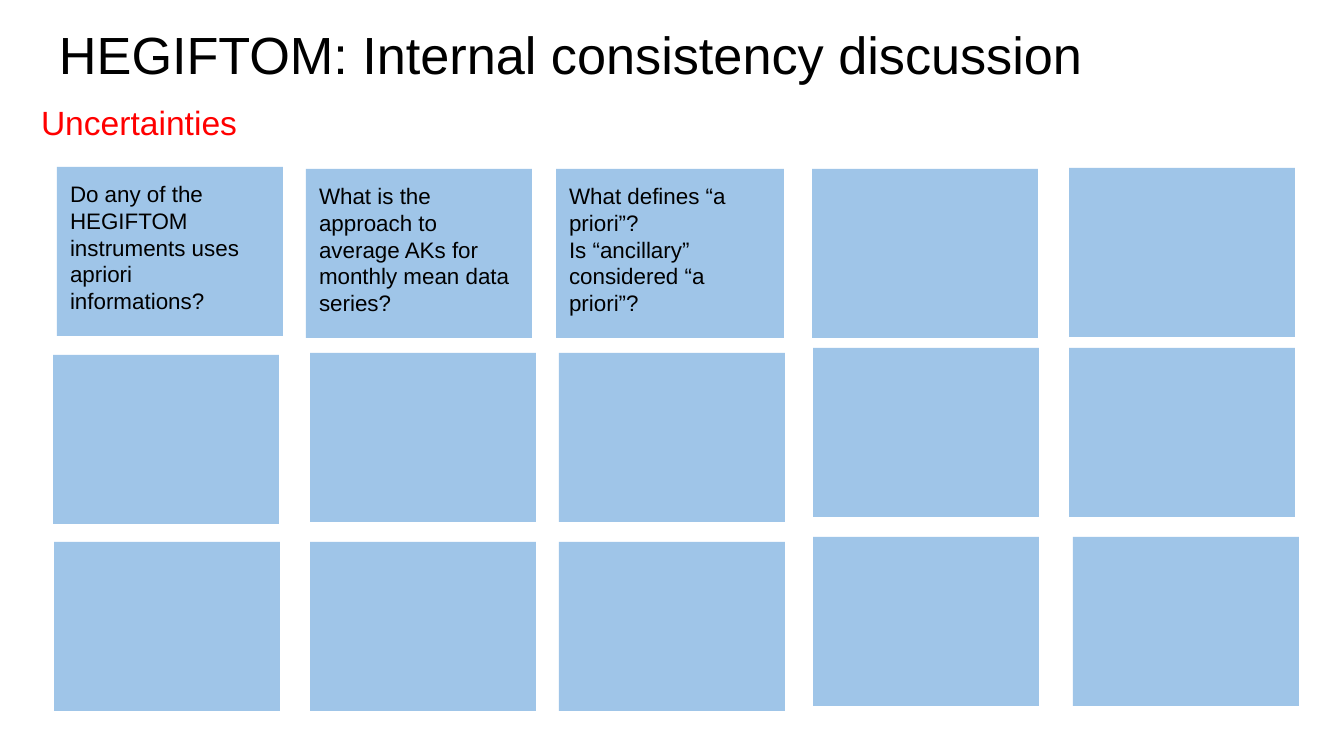
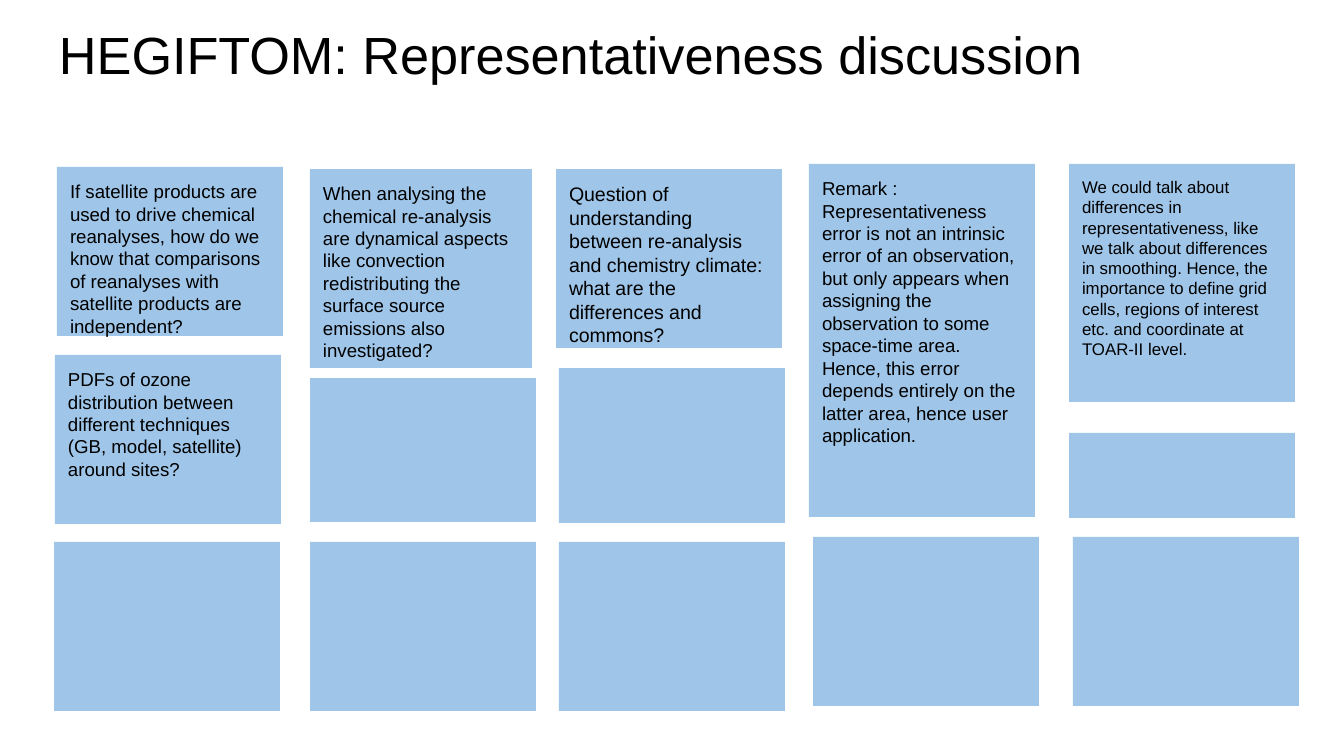
import dataclasses

import pptx
import pptx.dml.color
import pptx.enum.shapes
import pptx.enum.text
import pptx.util

EMU_PER_PX = 914400 / 134.4
COLORS = {"note": "9FC5E8", "text": "000000", "accent": "FF0000", "background": "FFFFFF"}
FONT = "Arial"
INSET = 13

# Boxes are left, top, width, height in px
SLIDE_SIZE = (1344, 756)
TITLE_BOX = (46, 9, 1253, 85)
SUBTITLE_BOX = (28, 89, 546, 63)
BOARD_BOX = (54, 164, 1245, 547)
COLUMN_LEFTS = (0, 256, 505, 759, 1015)


@dataclasses.dataclass
class Note:
    column: int
    top: int
    text: str = ""
    size: float = 12
    nudge: int = 0
    width: int = 226
    height: int = 169


# Blank notes along the bottom of every board
BOTTOM_ROW = [
    Note(0, 378), Note(1, 378), Note(2, 378), Note(3, 373), Note(4, 373, nudge=4),
]

CONSISTENCY_NOTES = [
    Note(0, 3, "Do any of the HEGIFTOM instruments uses apriori informations?", nudge=3),
    Note(1, 5, "What is the approach to average AKs for monthly mean data series?", nudge=-4),
    Note(2, 5, "What defines “a priori”?\nIs “ancillary” considered “a priori”?",
         nudge=-3, width=228),
    Note(3, 5, nudge=-1),
    Note(4, 4),
    Note(0, 191, nudge=-1),
    Note(1, 189),
    Note(2, 189),
    Note(3, 184),
    Note(4, 184),
]

REPRESENTATIVENESS_NOTES = [
    Note(0, 3, "If satellite products are used to drive chemical reanalyses, how do we know "
         "that comparisons of reanalyses with satellite products are independent?",
         size=10, nudge=3),
    Note(1, 5, "When analysing the chemical re-analysis are dynamical aspects like "
         "convection redistributing the surface source emissions also investigated?",
         size=10, width=222, height=199),
    Note(2, 5, "Question of understanding between re-analysis and chemistry climate: "
         "what are the differences and commons?", size=10.5, nudge=-3, height=179),
    Note(3, 0, "Remark : Representativeness error is not an intrinsic error of an "
         "observation, but only appears when assigning the observation to some "
         "space-time area. Hence, this error depends entirely on the latter area, "
         "hence user application.", size=10, nudge=-4, height=353),
    Note(4, 0, "We could talk about differences in representativeness, like we talk about "
         "differences in smoothing. Hence, the importance to define grid cells, regions "
         "of interest etc. and coordinate at TOAR-II level.", size=9, height=238),
    Note(0, 191, "PDFs of ozone distribution between different techniques "
         "(GB, model, satellite) around sites?", size=10, nudge=1),
    Note(1, 214, height=144),
    Note(2, 204, height=155),
    Note(4, 269, height=85),
]


def px(length):
    return pptx.util.Emu(round(length * EMU_PER_PX))


def rgb(name):
    return pptx.dml.color.RGBColor.from_string(COLORS[name])


def write_text(shape, text, size=12, color="text"):
    frame = shape.text_frame
    frame.word_wrap = True
    frame.auto_size = pptx.enum.text.MSO_AUTO_SIZE.NONE
    frame.vertical_anchor = pptx.enum.text.MSO_ANCHOR.TOP
    frame.margin_left = frame.margin_right = px(INSET)
    frame.margin_top = frame.margin_bottom = px(INSET)
    frame.text = text
    for para in frame.paragraphs:
        para.alignment = pptx.enum.text.PP_ALIGN.LEFT
        para.line_spacing = 1.0
        para.space_before = para.space_after = pptx.util.Pt(0)
        for span in para.runs:
            span.font.name = FONT
            span.font.size = pptx.util.Pt(size)
            span.font.color.rgb = rgb(color)


def place_title(page, box, text):
    title = page.shapes.title
    title.left, title.top, title.width, title.height = map(px, box)
    write_text(title, text, size=28)


def add_subtitle(page, box, text):
    subtitle = page.shapes.add_textbox(*map(px, box))
    write_text(subtitle, text, size=18, color="accent")


def add_board(page, box, notes):
    left, top = box[:2]
    for note in notes:
        card = page.shapes.add_shape(
            pptx.enum.shapes.MSO_SHAPE.RECTANGLE,
            px(left + COLUMN_LEFTS[note.column] + note.nudge), px(top + note.top),
            px(note.width), px(note.height))
        card.shadow.inherit = False
        card.fill.solid()
        card.fill.fore_color.rgb = rgb("note")
        card.line.fill.background()
        if note.text:
            write_text(card, note.text, size=note.size)


def add_discussion(deck, title, notes, subtitle=None):
    page = deck.slides.add_slide(deck.slide_layouts.get_by_name("Title Only"))
    page.background.fill.solid()
    page.background.fill.fore_color.rgb = rgb("background")
    place_title(page, TITLE_BOX, title)
    if subtitle:
        add_subtitle(page, SUBTITLE_BOX, subtitle)
    add_board(page, BOARD_BOX, notes + BOTTOM_ROW)


def main():
    deck = pptx.Presentation()
    deck.slide_width, deck.slide_height = map(px, SLIDE_SIZE)
    add_discussion(deck, "HEGIFTOM: Internal consistency discussion",
                   CONSISTENCY_NOTES, subtitle="Uncertainties")
    add_discussion(deck, "HEGIFTOM: Representativeness discussion",
                   REPRESENTATIVENESS_NOTES)
    deck.save("out.pptx")


if __name__ == "__main__":
    main()
